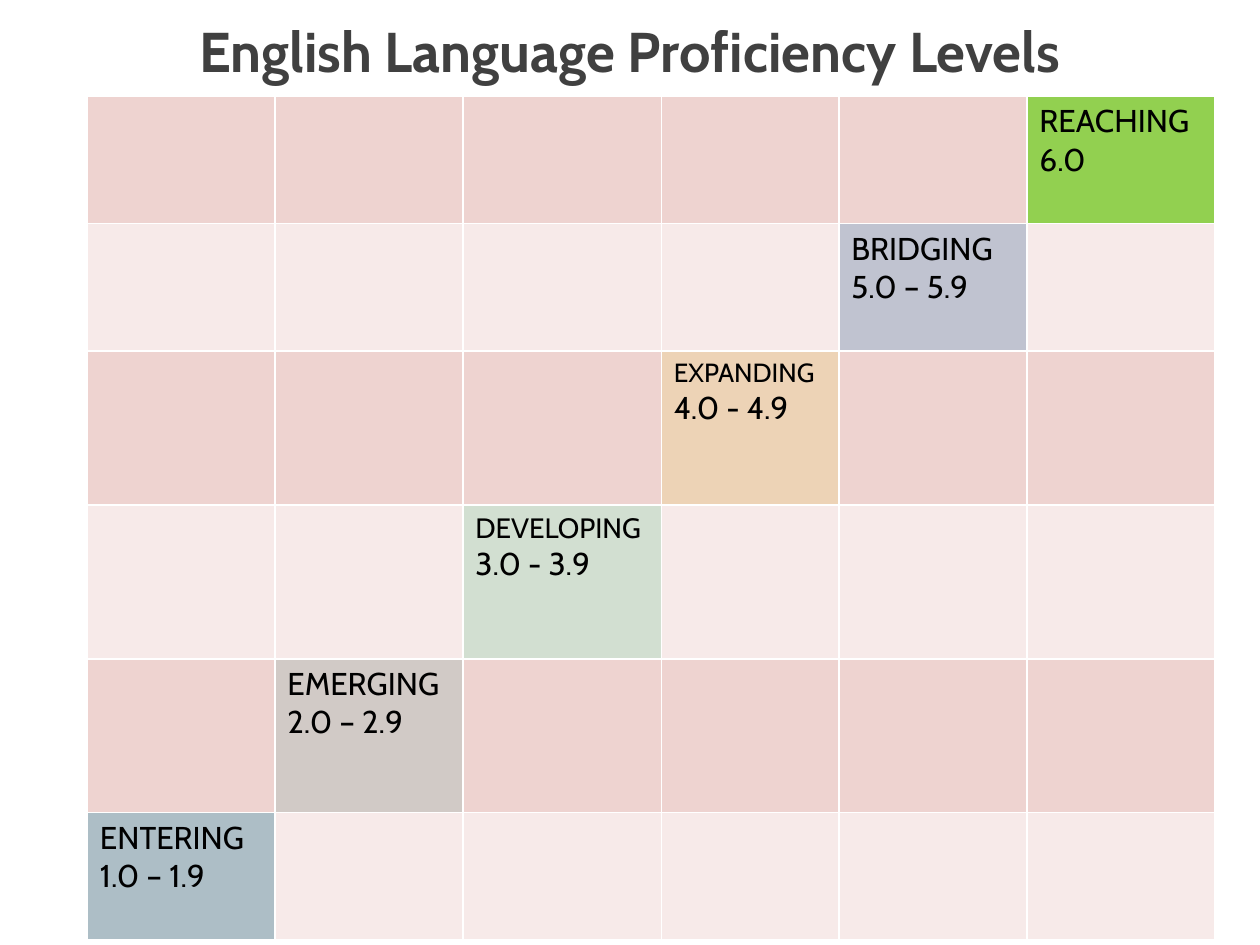
import dataclasses

import lxml.etree
import pptx
import pptx.dml.color
import pptx.enum.text
import pptx.oxml.ns
import pptx.util

Cm = pptx.util.Cm
Pt = pptx.util.Pt
FONT = "Cabin"
COLORS = {
    "title": "404040", "text": "000000", "border": "FFFFFF",
    "band_dark": "EED3D0", "band_light": "F7EAE9",
    "reaching": "92D050", "bridging": "C0C3D0", "expanding": "EDD3B6",
    "developing": "D2DFD1", "emerging": "D1CAC6", "entering": "ADBEC6",
}
TALL, SHORT = 3.1, 2.57


@dataclasses.dataclass
class Level:
    name: str
    scores: str
    row_height: float
    name_size: int = 18


# Highest level first: one table row each
LEVELS = [
    Level("REACHING", "6.0", SHORT),
    Level("BRIDGING", "5.0 – 5.9", SHORT),
    Level("EXPANDING", "4.0 - 4.9", TALL, 15),
    Level("DEVELOPING", "3.0 - 3.9", TALL, 16),
    Level("EMERGING", "2.0 – 2.9", TALL),
    Level("ENTERING", "1.0 – 1.9", SHORT),
]
COLUMN_WIDTHS = [3.78, 3.79, 4.0, 3.58, 3.79, 3.79]


def rgb(key: str) -> pptx.dml.color.RGBColor:
    return pptx.dml.color.RGBColor.from_string(COLORS[key])


def add_run(p, text: str, size: int, color: str, bold: bool = False) -> None:
    r = p.add_run()
    r.text = text
    for name, value in {"name": FONT, "size": Pt(size), "bold": bold}.items():
        setattr(r.font, name, value)
    r.font.color.rgb = rgb(color)


def add_title(slide, text: str) -> None:
    sp = slide.shapes.add_textbox(Cm(1.27), Cm(-0.33), Cm(22.86), Cm(2.21))
    tf = sp.text_frame
    tf.word_wrap = True
    tf.vertical_anchor = pptx.enum.text.MSO_ANCHOR.MIDDLE
    p = tf.paragraphs[0]
    p.alignment = pptx.enum.text.PP_ALIGN.CENTER
    p.line_spacing = Pt(52)
    add_run(p, text, 32, "title", bold=True)


def style_cell(cell, color: str) -> None:
    """Fill the cell and draw a thin border on its four sides."""
    cell.fill.solid()
    cell.fill.fore_color.rgb = rgb(color)
    qn = pptx.oxml.ns.qn
    tc_pr = cell._tc.get_or_add_tcPr()
    for i, side in enumerate(("lnL", "lnR", "lnT", "lnB")):
        ln = lxml.etree.Element(qn(f"a:{side}"), w=str(Pt(1)))
        fill = lxml.etree.SubElement(ln, qn("a:solidFill"))
        lxml.etree.SubElement(fill, qn("a:srgbClr"), val=COLORS["border"])
        tc_pr.insert(i, ln)


def add_level_table(slide, levels: list[Level]) -> None:
    """Draw the levels as a staircase rising from bottom left to top right."""
    n = len(levels)
    height = sum(level.row_height for level in levels)
    table = slide.shapes.add_table(
        n, n, Cm(1.76), Cm(1.94), Cm(sum(COLUMN_WIDTHS)), Cm(height)).table
    table.first_row = False
    table.horz_banding = False
    for column, width in zip(table.columns, COLUMN_WIDTHS):
        column.width = Cm(width)
    for i, level in enumerate(levels):
        table.rows[i].height = Cm(level.row_height)
        band = "band_light" if i % 2 else "band_dark"
        step = n - 1 - i
        for j in range(n):
            style_cell(table.cell(i, j), level.name.lower() if j == step else band)
        tf = table.cell(i, step).text_frame
        add_run(tf.paragraphs[0], level.name, level.name_size, "text")
        add_run(tf.add_paragraph(), level.scores, 18, "text")


def main() -> None:
    prs = pptx.Presentation()
    prs.slide_width, prs.slide_height = Cm(25.4), Cm(19.05)
    slide = prs.slides.add_slide(prs.slide_layouts[6])
    add_title(slide, "English Language Proficiency Levels")
    add_level_table(slide, LEVELS)
    prs.save("out.pptx")


if __name__ == "__main__":
    main()
